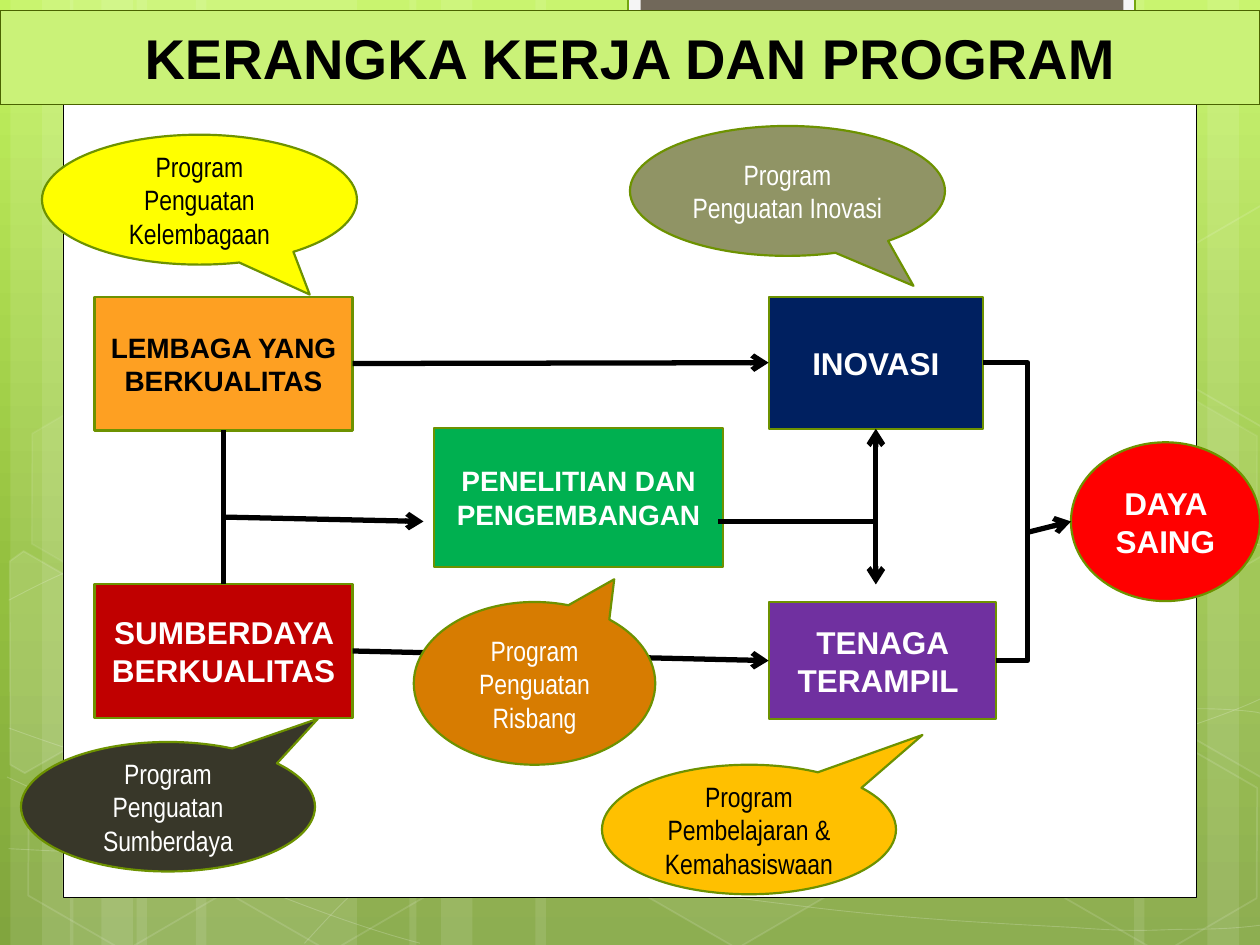
from copy import deepcopy

from pptx import Presentation
from pptx.dml.color import RGBColor
from pptx.enum.shapes import MSO_CONNECTOR, MSO_SHAPE
from pptx.enum.text import MSO_ANCHOR, MSO_AUTO_SIZE, PP_ALIGN
from pptx.oxml.ns import qn
from pptx.oxml.xmlchemy import OxmlElement
from pptx.util import Pt

RECTANGLE = MSO_SHAPE.RECTANGLE
OVAL = MSO_SHAPE.OVAL
HEXAGON = MSO_SHAPE.HEXAGON
CALLOUT = MSO_SHAPE.OVAL_CALLOUT
STRAIGHT = MSO_CONNECTOR.STRAIGHT
ELBOW = MSO_CONNECTOR.ELBOW
CENTER = PP_ALIGN.CENTER
MIDDLE = MSO_ANCHOR.MIDDLE
NO_AUTOFIT = MSO_AUTO_SIZE.NONE
TITLE_ONLY = 5
TOP, LEFT, BOTTOM, RIGHT = range(4)

WHITE, BLACK, OLIVE = "FFFFFF", "000000", "6D9200"

BANDS = [(78, 126), (6, 36), (24, 60), (112, 126), (40, 36), (58, 60),
         (528, 126), (690, 36), (648, 60), (306, 222), (234, 36), (252, 60)]

CURVES = [
    [(5, 485), (44, 487), (83, 489), (137, 488), (191, 487), (258, 486), (330, 479),
     (402, 472), (504, 458), (570, 444), (636, 431), (703, 409), (725, 397)],
    [(5, 343), (26, 332), (47, 321), (87, 310), (128, 300), (186, 284), (250, 279),
     (314, 274), (391, 273), (471, 279), (550, 284), (682, 307), (725, 312)],
    [(4, 444), (91, 484), (178, 523), (240, 539)],
    [(5, 416), (27, 424), (50, 432), (92, 444), (134, 454), (197, 472), (257, 485),
     (317, 497), (392, 510), (452, 517), (512, 525), (576, 528), (614, 530),
     (652, 533), (662, 531), (680, 531), (699, 531), (712, 530), (725, 528)],
    [(174, 539), (187, 525), (200, 510), (217, 498), (235, 485), (259, 470), (279, 460),
     (300, 450), (312, 446), (338, 438), (364, 431), (413, 421), (438, 416),
     (464, 411), (467, 411), (490, 410), (512, 407), (547, 405), (572, 405),
     (597, 404), (638, 405), (638, 405), (654, 405), (670, 405), (686, 405),
     (699, 405), (711, 406), (718, 407), (722, 408), (722, 408), (724, 408)],
]

HEXAGONS = [(240.5, 26, 4, 8), (358, 424, 6, 12), (8, 425.5, 0, 12), (10, 224.5, 7, 8),
            (125.5, 426, 0, 12), (542, 326, 10, 12), (600.5, 427, 0, 12),
            (600.5, 226, 7, 8)]

LEFT_CUT = [(0, 9), (4, 0), (68, 0), (99.5, 55.5), (68, 109.5), (58.5, 109.5)]
RIGHT_CUT = [(0, 54), (31, 0), (38, 0), (98, 104), (94, 109.5), (31.5, 109.5)]
EDGE_HEXAGONS = [(LEFT_CUT, -24, 330.5, 10), (RIGHT_CUT, 660, 319.5, 4),
                 (RIGHT_CUT, 660, 119, 0)]

CALLOUTS = [
    ("Program Pembelajaran & Kemahasiswaan", (344, 437, 168, 74), "FFC000", BLACK, (0.59, -0.73)),
    ("Program Penguatan Sumberdaya", (12, 424, 168, 74), "383729", WHITE, (0.51, -0.68)),
    ("Program Penguatan Kelembagaan", (24, 77, 180, 74.25), "FFFF00", BLACK, (0.35, 0.73)),
    ("Program Penguatan Inovasi", (360, 72, 180, 74.25), "909465", WHITE, (0.4, 0.73)),
    ("Program Penguatan Risbang", (236.5, 344, 138, 93), "D77C01", WHITE, (0.33, -0.64)),
]


def color(value):
    return RGBColor.from_string(value)


def paint(fill, value, opacity=100):
    if value is None or opacity == 0:
        fill.background()
        return
    fill.solid()
    fill.fore_color.rgb = color(value)
    if opacity < 100:
        alpha = OxmlElement("a:alpha")
        alpha.set("val", str(opacity * 1000))
        fill._xPr.find(qn("a:solidFill"))[0].append(alpha)


def style(shape, fill, line=None, width=1.25, fill_opacity=100, line_opacity=100):
    paint(shape.fill, fill, fill_opacity)
    paint(shape.line.fill, line, line_opacity)
    if line:
        shape.line.width = Pt(width)


def add_box(slide, kind, box, fill, line=None, width=1.25, **opacities):
    shape = slide.shapes.add_shape(kind, *map(Pt, box))
    shape.shadow.inherit = False
    style(shape, fill, line, width, **opacities)
    return shape


def write(shape, text, size, text_color, font="Arial", bold=True):
    frame = shape.text_frame
    frame.word_wrap = True
    frame.auto_size = NO_AUTOFIT
    frame.vertical_anchor = MIDDLE
    paragraph = frame.paragraphs[0]
    paragraph.alignment = CENTER
    run = paragraph.add_run()
    run.text = text
    run.font.name = font
    run.font.size = Pt(size)
    run.font.bold = bold
    run.font.color.rgb = color(text_color)


def add_node(slide, text, box, fill, size=18, text_color=WHITE, kind=RECTANGLE):
    node = add_box(slide, kind, box, fill, OLIVE)
    write(node, text, size, text_color)
    return node


def add_callout(slide, text, box, fill, text_color, tip):
    callout = add_box(slide, CALLOUT, box, fill, OLIVE)
    callout.adjustments[0], callout.adjustments[1] = tip
    write(callout, text, 16, text_color, "Arial Narrow", False)


def add_link(slide, start, end, arrows=(), kind=STRAIGHT):
    link = slide.shapes.add_connector(kind, *map(Pt, start + end))
    paint(link.line.fill, BLACK)
    link.line.width = Pt(3)
    for arrow in arrows:
        tip = OxmlElement(f"a:{arrow}End")
        tip.set("type", "arrow")
        link.line._get_or_add_ln().append(tip)
    link._element.spPr.append(OxmlElement("a:effectLst"))
    return link


def join(slide, source, source_side, target, target_side, arrows=(), kind=STRAIGHT):
    link = add_link(slide, (0, 0), (0, 0), arrows, kind)
    link.begin_connect(source, source_side)
    link.end_connect(target, target_side)
    return link


def bend_at(link, x):
    ratio = (Pt(x) - link.begin_x) / (link.end_x - link.begin_x)
    guide = OxmlElement("a:gd")
    guide.set("name", "adj1")
    guide.set("fmla", f"val {round(ratio * 100000)}")
    link._element.spPr.find(qn("a:prstGeom")).get_or_add_avLst().append(guide)


def add_outline(slide, points, closed, **looks):
    vertices = [(Pt(x), Pt(y)) for x, y in points]
    builder = slide.shapes.build_freeform(*vertices[0])
    builder.add_line_segments(vertices[1:], close=closed)
    outline = builder.convert_to_shape()
    outline.shadow.inherit = False
    style(outline, line=WHITE, **looks)
    return outline


def add_curve(slide, controls):
    curve = add_outline(slide, controls, False, fill=None, width=0.5, line_opacity=20)
    segments = list(curve._element.iter(qn("a:lnTo")))
    for i in range(0, len(segments), 3):
        bezier = OxmlElement("a:cubicBezTo")
        segments[i].addprevious(bezier)
        for segment in segments[i:i + 3]:
            bezier.append(segment[0])
            segment.getparent().remove(segment)


def add_background(slide):
    fill = slide.background.fill
    fill.gradient()
    fill.gradient_angle = 270
    stop_list = slide.element.find(".//" + qn("a:gsLst"))
    stop_list.insert(1, deepcopy(stop_list[0]))
    stops = (0, "C3F35F"), (0.62, "93BF3F"), (1, "81A53E")
    for stop, (position, value) in zip(fill.gradient_stops, stops):
        stop.position = position
        stop.color.rgb = color(value)
    for left, width in BANDS:
        add_box(slide, RECTANGLE, (left, 0, width, 540), WHITE, fill_opacity=10)
    for controls in CURVES:
        add_curve(slide, controls)
    for left, top, inside, edge in HEXAGONS:
        hexagon = add_box(slide, HEXAGON, (left, top, 126, 109.5), WHITE, WHITE, 1,
                          fill_opacity=inside, line_opacity=edge)
        hexagon.adjustments[0] = 0.285
        hexagon.rotation = 30
    for corners, left, top, inside in EDGE_HEXAGONS:
        placed = [(left + x, top + y) for x, y in corners]
        cut = add_outline(slide, placed, True, fill=WHITE, width=1,
                          fill_opacity=inside, line_opacity=12)
        cut.rotation = 30
    add_box(slide, RECTANGLE, (36, 26, 648, 487), WHITE, BLACK, 0.5)
    add_box(slide, RECTANGLE, (359, -1.5, 289.5, 55), "F5F5F5", "74A510")
    add_box(slide, RECTANGLE, (366, -1.5, 276, 49), "71685A")


def add_title(slide, text):
    title = slide.shapes.title
    title.left, title.top, title.width, title.height = map(Pt, (0, 6, 720, 53.75))
    style(title, "CAF278", "4A6300", 0.75)
    write(title, text, 32, BLACK)
    slide.shapes._spTree.append(title._element)


def main():
    deck = Presentation()
    deck.slide_width, deck.slide_height = Pt(720), Pt(540)
    slide = deck.slides.add_slide(deck.slide_layouts[TITLE_ONLY])
    add_background(slide)

    institution = add_node(slide, "LEMBAGA YANG BERKUALITAS", (54, 169.5, 147.5, 76.5),
                           "FEA022", 16, BLACK)
    resources = add_node(slide, "SUMBERDAYA BERKUALITAS", (54, 333.75, 147.5, 76.5), "C00000")
    innovation = add_node(slide, "INOVASI", (439.25, 169.5, 122.5, 75.5), "002060")
    workforce = add_node(slide, "TENAGA TERAMPIL ", (439.25, 344, 129.75, 67), "7030A0")
    add_node(slide, "PENELITIAN DAN PENGEMBANGAN", (248.25, 244.75, 164.75, 79.25),
             "00B050", 16)
    add_node(slide, "DAYA SAING", (612, 252.75, 108, 90.75), "FF0000", kind=OVAL)

    join(slide, institution, RIGHT, innovation, LEFT, ["tail"])
    join(slide, resources, RIGHT, workforce, LEFT, ["tail"])
    join(slide, institution, BOTTOM, resources, TOP)
    spread = add_link(slide, (500.5, 245), (500.5, 334), ["head", "tail"])
    spread.begin_connect(innovation, BOTTOM)
    add_link(slide, (128, 295.5), (242, 298), ["tail"])
    add_link(slide, (410.5, 298), (500.5, 298))

    for callout in CALLOUTS:
        add_callout(slide, *callout)
    bracket = join(slide, innovation, RIGHT, workforce, RIGHT, kind=ELBOW)
    bend_at(bracket, 587.25)
    add_link(slide, (588, 304), (612, 298), ["tail"])
    add_title(slide, "KERANGKA KERJA DAN PROGRAM")
    deck.save("out.pptx")


if __name__ == "__main__":
    main()
